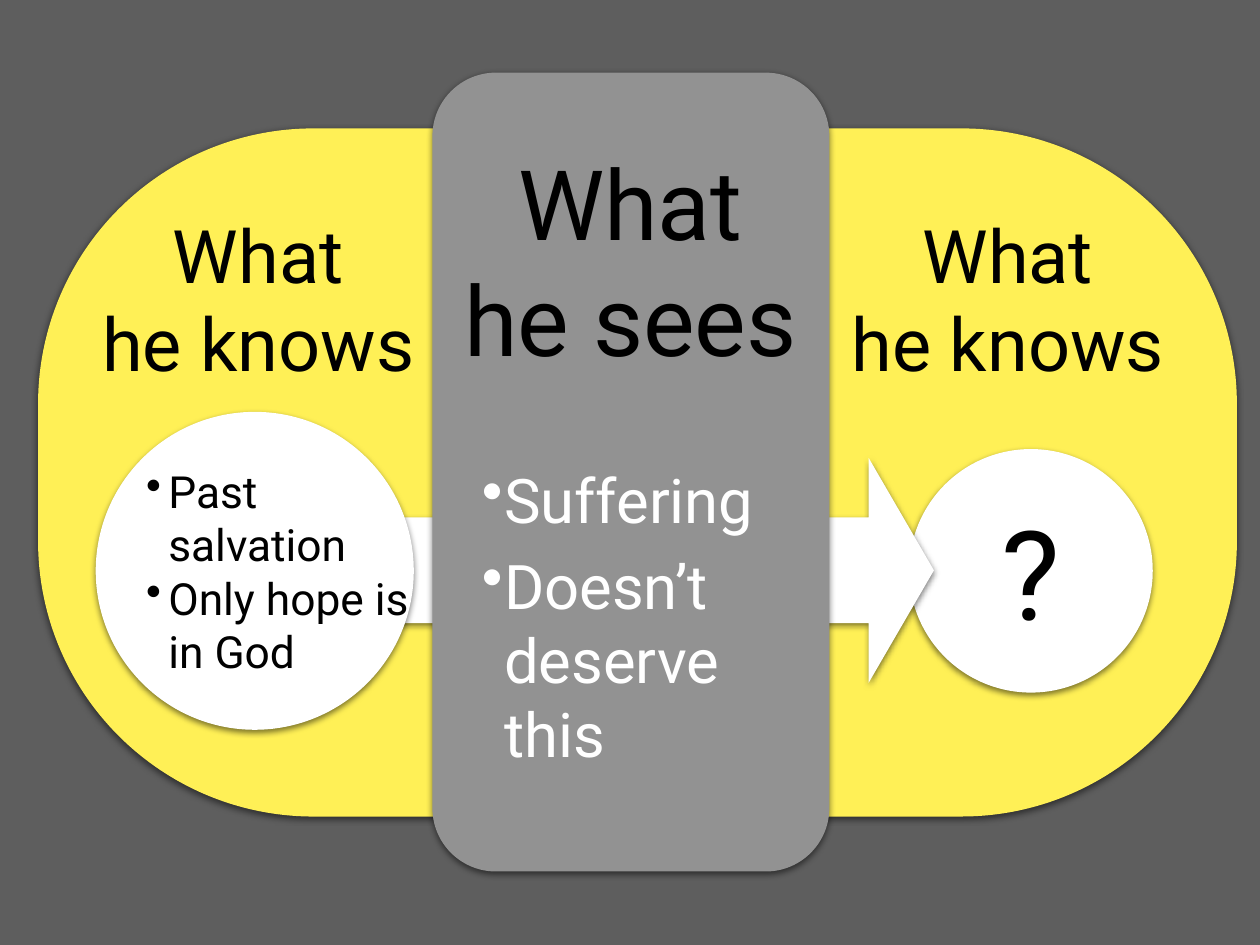
import dataclasses

import lxml.etree
import pptx
import pptx.dml.color
import pptx.enum.shapes
import pptx.enum.text
import pptx.oxml.ns
import pptx.util

RGBColor = pptx.dml.color.RGBColor
Preset = pptx.enum.shapes.MSO_SHAPE
Align = pptx.enum.text.PP_ALIGN

PX = 9144  # EMU, 100 px to the inch
INSET = 6
BULLET_INDENT = 25

DARK_GRAY = RGBColor(0x5E, 0x5E, 0x5E)
MID_GRAY = RGBColor(0x92, 0x92, 0x92)
YELLOW = RGBColor(0xFF, 0xF0, 0x56)
WHITE = RGBColor(0xFF, 0xFF, 0xFF)
BLACK = RGBColor(0x00, 0x00, 0x00)


@dataclasses.dataclass(frozen=True)
class Box:
    left: int
    top: int
    width: int
    height: int

    def emu(self) -> tuple[int, ...]:
        return tuple(PX * length for length in dataclasses.astuple(self))


@dataclasses.dataclass(frozen=True)
class Panel:
    box: Box
    preset: Preset
    fill: RGBColor
    adjustments: tuple[float, ...] = ()
    shadow: bool = True


@dataclasses.dataclass(frozen=True)
class Label:
    box: Box
    paragraphs: tuple[str, ...]
    size: int
    color: RGBColor = BLACK
    bulleted: bool = False
    space_before: int = 0


KNOWS = ("What\nhe knows",)

# Back to front
ELEMENTS: tuple[Panel | Label, ...] = (
    Panel(Box(0, -3, 1422, 1072), Preset.RECTANGLE, DARK_GRAY, shadow=False),
    Panel(Box(43, 145, 1353, 777), Preset.ROUNDED_RECTANGLE, YELLOW, (0.4,)),
    Panel(Box(1026, 507, 275, 275), Preset.OVAL, WHITE),
    Panel(Box(369, 517, 685, 254), Preset.RIGHT_ARROW, WHITE, (0.47, 0.29)),
    Panel(Box(488, 82, 448, 902), Preset.ROUNDED_RECTANGLE, MID_GRAY, (0.16,)),
    Label(Box(538, 494, 347, 403), ("Suffering", "Doesn’t deserve this"), 50,
          WHITE, bulleted=True, space_before=10),
    Label(Box(990, 543, 347, 203), ("?",), 101),
    Label(Box(18, 217, 547, 239), KNOWS, 60),
    Label(Box(438, 139, 547, 308), ("What\nhe sees",), 79),
    Label(Box(864, 217, 547, 239), KNOWS, 60),
    Panel(Box(108, 465, 359, 359), Preset.OVAL, WHITE),
    Label(Box(159, 503, 316, 283), ("Past salvation", "Only hope is in God"), 36,
          bulleted=True),
)


def add_child(parent, tag: str, **attributes: object):
    child = lxml.etree.SubElement(parent, pptx.oxml.ns.qn(tag))
    for name, value in attributes.items():
        child.set(name, str(value))
    return child


def add_soft_shadow(shape) -> None:
    """Fill the empty effect list with a half-transparent shadow straight below."""
    effects = shape._element.spPr.find(pptx.oxml.ns.qn("a:effectLst"))
    shadow = add_child(effects, "a:outerShdw", blurRad=pptx.util.Pt(5),
                       dist=pptx.util.Pt(2), dir=90 * 60000, rotWithShape=0)
    color = add_child(shadow, "a:srgbClr", val=BLACK)
    add_child(color, "a:alpha", val=50000)


def add_bullet(paragraph) -> None:
    properties = paragraph._p.get_or_add_pPr()
    properties.set("marL", str(BULLET_INDENT * PX))
    properties.set("indent", str(-BULLET_INDENT * PX))
    add_child(properties, "a:buChar", char="•")


def draw_panel(slide, panel: Panel) -> None:
    shape = slide.shapes.add_shape(panel.preset, *panel.box.emu())
    for index, value in enumerate(panel.adjustments):
        shape.adjustments[index] = value
    shape.fill.solid()
    shape.fill.fore_color.rgb = panel.fill
    shape.line.fill.background()
    shape.shadow.inherit = False
    if panel.shadow:
        add_soft_shadow(shape)


def draw_label(slide, label: Label) -> None:
    frame = slide.shapes.add_textbox(*label.box.emu()).text_frame
    frame.word_wrap = True
    frame.auto_size = pptx.enum.text.MSO_AUTO_SIZE.SHAPE_TO_FIT_TEXT
    frame.vertical_anchor = pptx.enum.text.MSO_ANCHOR.MIDDLE
    frame.margin_left = frame.margin_right = INSET * PX
    frame.margin_top = frame.margin_bottom = INSET * PX
    for index, text in enumerate(label.paragraphs):
        paragraph = frame.add_paragraph() if index else frame.paragraphs[0]
        paragraph.text = text
        paragraph.alignment = Align.LEFT if label.bulleted else Align.CENTER
        paragraph.space_before = pptx.util.Pt(label.space_before)
        if label.bulleted:
            add_bullet(paragraph)
        paragraph.font.name = "Roboto"
        paragraph.font.size = pptx.util.Pt(label.size)
        paragraph.font.color.rgb = label.color


def main() -> None:
    presentation = pptx.Presentation()
    presentation.slide_width = 1422 * PX
    presentation.slide_height = 1067 * PX
    slide = presentation.slides.add_slide(presentation.slide_layouts[6])
    for element in ELEMENTS:
        if isinstance(element, Panel):
            draw_panel(slide, element)
        else:
            draw_label(slide, element)
    presentation.save("out.pptx")


if __name__ == "__main__":
    main()
